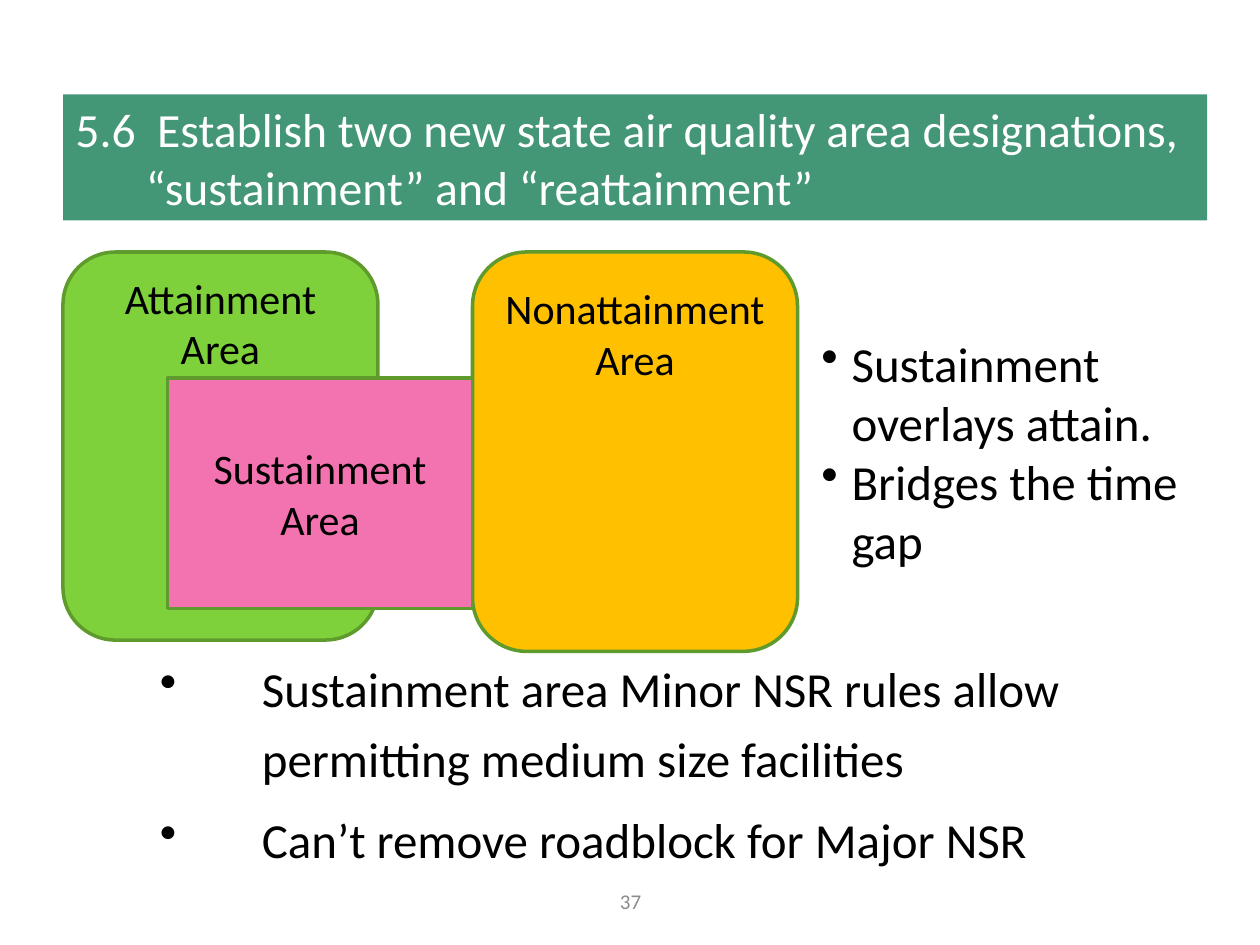
from pptx import Presentation
from pptx import util as u
from pptx.dml.color import RGBColor
from pptx.enum import shapes, text
from pptx.oxml.ns import qn

COLORS = {"black": "000000", "white": "FFFFFF", "gray": "8C8C8C", "teal": "439777",
          "green": "7FD13B", "gold": "FFC000", "pink": "F273AF", "outline": "5E9B2C"}


def rgb(name):
    return RGBColor.from_string(COLORS[name])


class SlideBuilder:
    font = "Calibri"

    def __init__(self, prs):
        self.s = prs.slides.add_slide(prs.slide_layouts[6])

    def fill_text(self, sp, lines, size, color="black", anchor="TOP", top=0.05,
                  bullet=False, margin=0, indent=0, **paragraph_format):
        tf = sp.text_frame
        frame = {"word_wrap": True, "margin_top": u.Inches(top),
                 "vertical_anchor": text.MSO_ANCHOR[anchor]}
        for name, value in frame.items():
            setattr(tf, name, value)
        for i, line in enumerate(lines):
            p = tf.add_paragraph() if i else tf.paragraphs[0]
            for name, value in paragraph_format.items():
                setattr(p, name, value)
            pPr = p._p.get_or_add_pPr()
            pPr.set("marL", str(u.Inches(margin)))
            pPr.set("indent", str(u.Inches(indent)))
            if bullet:
                pPr.append(pPr.makeelement(qn("a:buChar"), {"char": "•"}))
            r = p.add_run()
            r.text = line
            for name, value in {"name": self.font, "size": u.Pt(size)}.items():
                setattr(r.font, name, value)
            r.font.color.rgb = rgb(color)

    def textbox(self, at, lines, size, **style):
        sp = self.s.shapes.add_textbox(*map(u.Inches, at))
        self.fill_text(sp, lines, size, **style)

    def box(self, kind, at, fill, lines, size, line=None, **style):
        sp = self.s.shapes.add_shape(shapes.MSO_SHAPE[kind], *map(u.Inches, at))
        sp.shadow.inherit = False
        sp.fill.solid()
        sp.fill.fore_color.rgb = rgb(fill)
        if line:
            sp.line.color.rgb = rgb(line)
            sp.line.width = u.Pt(2)
        else:
            sp.line.fill.background()
        self.fill_text(sp, lines, size, **style)

    def area(self, kind, at, fill, label, **style):
        self.box(kind, at, fill, [label], 24, line="outline",
                 alignment=text.PP_ALIGN.CENTER, **style)


def main():
    prs = Presentation()
    prs.slide_width, prs.slide_height = u.Inches(10), u.Inches(7.5)
    b = SlideBuilder(prs)

    b.textbox((0.67, 5.08, 9.08, 1.92),
              ["Sustainment area Minor NSR rules allow permitting medium size facilities",
               "Can’t remove roadblock for Major NSR"], 28,
              bullet=True, margin=1.31, indent=-0.81, line_spacing=1.2, space_after=u.Pt(6))
    b.textbox((3.42, 6.95, 3.17, 0.4), ["37"], 12, color="gray", anchor="MIDDLE",
              alignment=text.PP_ALIGN.CENTER)
    b.box("RECTANGLE", (0.5, 0.75, 9.08, 1), "teal",
          ["5.6  Establish two new state air quality area designations, "
           "“sustainment” and “reattainment”"], 27.2,
          color="white", anchor="MIDDLE", margin=0.56, indent=-0.56,
          alignment=text.PP_ALIGN.LEFT, space_after=u.Pt(6))

    b.area("ROUNDED_RECTANGLE", (0.5, 2, 2.5, 3.08), "green", "Attainment Area", top=0.04)
    b.area("ROUNDED_RECTANGLE", (3.75, 2, 2.58, 3.17), "gold", "Nonattainment Area", top=0.12)
    b.area("RECTANGLE", (1.33, 3, 2.42, 1.83), "pink", "Sustainment Area", anchor="MIDDLE")

    b.textbox((6.42, 2.6, 3.33, 2.28),
              ["Sustainment overlays attain.", "Bridges the time gap"], 28,
              bullet=True, margin=0.24, indent=-0.24)

    prs.save("out.pptx")


if __name__ == "__main__":
    main()
